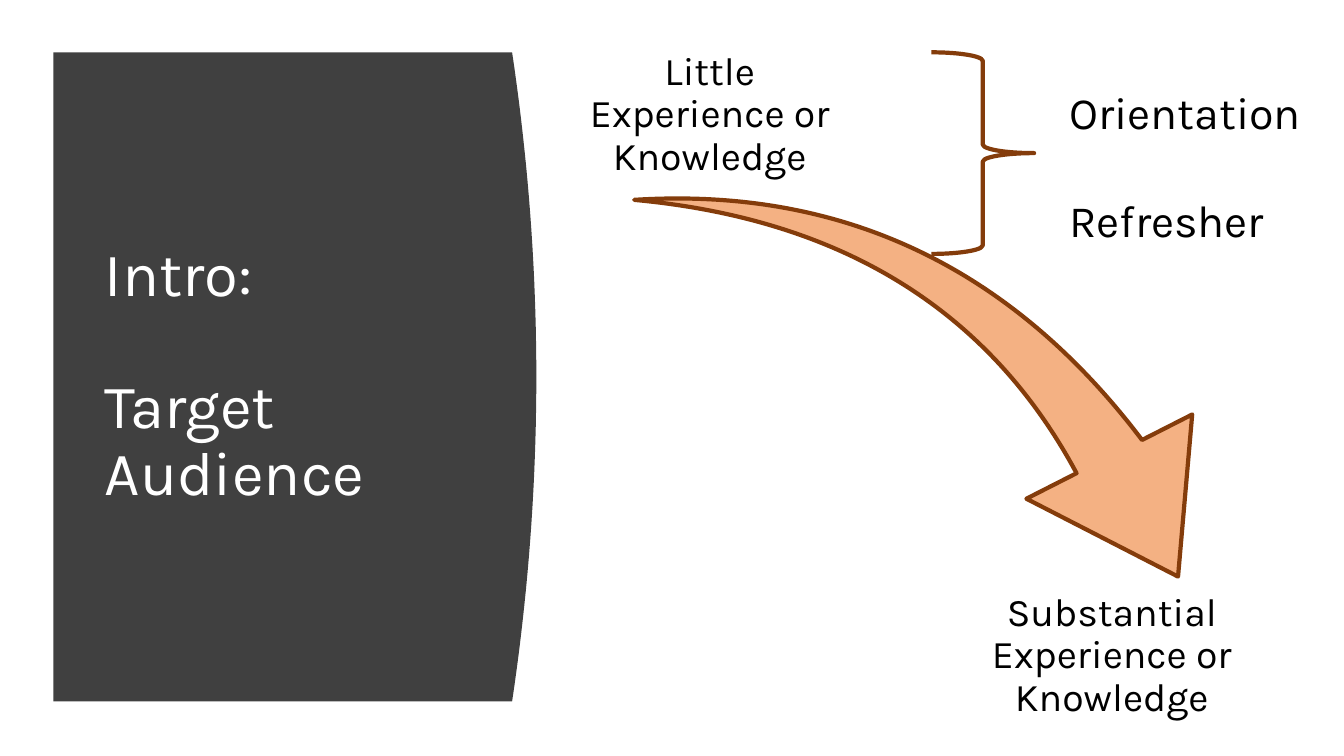
import pptx
import pptx.dml.color
import pptx.enum.shapes
import pptx.enum.text
import pptx.util

Pt = pptx.util.Pt
RGBColor = pptx.dml.color.RGBColor
MSO_ANCHOR = pptx.enum.text.MSO_ANCHOR
MSO_SHAPE = pptx.enum.shapes.MSO_SHAPE
PP_ALIGN = pptx.enum.text.PP_ALIGN

DARK_GREY = RGBColor(0x40, 0x40, 0x40)
WHITE = RGBColor(0xFF, 0xFF, 0xFF)
BLACK = RGBColor(0x00, 0x00, 0x00)
PEACH = RGBColor(0xF4, 0xB1, 0x83)
BROWN = RGBColor(0x84, 0x3C, 0x0B)
FONT_NAME = "Karla"
CURVE_STEPS = 40


def set_values(target, values):
    for name, value in values.items():
        setattr(target, name, value)


def place(shape, left, top, width, height):
    set_values(shape, {"left": Pt(left), "top": Pt(top),
                       "width": Pt(width), "height": Pt(height)})


def write_text(shape, lines, size, color, frame_format, paragraph_format):
    frame = shape.text_frame
    frame.text = "\n".join(lines)
    set_values(frame, {"word_wrap": True,
                       "auto_size": pptx.enum.text.MSO_AUTO_SIZE.NONE,
                       **frame_format})
    for paragraph in frame.paragraphs:
        set_values(paragraph, paragraph_format)
        for run in paragraph.runs:
            set_values(run.font, {"name": FONT_NAME, "size": Pt(size)})
            run.font.color.rgb = color


def add_curved_panel(slide, left, top, right, bottom, bulge):
    """Draw a panel whose right side bows outwards as a parabola."""
    points = [(left, top)]
    for step in range(CURVE_STEPS + 1):
        share = step / CURVE_STEPS
        offset = 2 * share - 1
        points.append((right + bulge * (1 - offset ** 2),
                       top + (bottom - top) * share))
    points.append((left, bottom))
    builder = slide.shapes.build_freeform(
        Pt(points[0][0]), Pt(points[0][1]), scale=1.0)
    builder.add_line_segments([(Pt(x), Pt(y)) for x, y in points[1:]])
    panel = builder.convert_to_shape()
    panel.shadow.inherit = False
    panel.fill.solid()
    panel.fill.fore_color.rgb = DARK_GREY
    panel.line.fill.background()


def add_outlined_shape(slide, kind, box, fill=None):
    shape = slide.shapes.add_shape(kind, *map(Pt, box))
    shape.shadow.inherit = False
    if fill is None:
        shape.fill.background()
    else:
        shape.fill.solid()
        shape.fill.fore_color.rgb = fill
    shape.line.color.rgb = BROWN
    shape.line.width = Pt(3)
    return shape


def add_level_label(slide, text, box, anchor):
    margins = {"margin_" + side: Pt(2.8)
               for side in ("left", "top", "right", "bottom")}
    write_text(slide.shapes.add_textbox(*map(Pt, box)), [text], 28, BLACK,
               {"vertical_anchor": anchor, **margins},
               {"alignment": PP_ALIGN.CENTER, "line_spacing": 0.9})


def format_title(title):
    place(title, 67.7, 80, 269.3, 377.3)
    write_text(title, ["Intro:", "Target Audience"], 44, WHITE,
               {"vertical_anchor": MSO_ANCHOR.MIDDLE},
               {"alignment": PP_ALIGN.LEFT, "line_spacing": 0.9})
    title.text_frame.paragraphs[1].space_before = Pt(47)


def main():
    presentation = pptx.Presentation()
    set_values(presentation, {"slide_width": Pt(960), "slide_height": Pt(540)})
    slide = presentation.slides.add_slide(presentation.slide_layouts[5])
    title = slide.shapes.title

    add_curved_panel(slide, 38.2, 37.4, 365.8, 501.1, 17.3)
    slide.shapes._spTree.append(title._element)
    format_title(title)

    arrow = add_outlined_shape(slide, MSO_SHAPE.SWOOSH_ARROW,
                               (476.6, 108.7, 388.1, 319.7), PEACH)
    arrow.adjustments[0] = 0.163
    arrow.adjustments[1] = 0.314
    arrow.rotation = 69.5

    add_level_label(slide, "Little Experience or Knowledge",
                    (412.6, 56.2, 188.6, 74.2), MSO_ANCHOR.BOTTOM)
    add_level_label(slide, "Substantial Experience or Knowledge",
                    (666.7, 420.5, 254.9, 74.2), MSO_ANCHOR.TOP)

    add_outlined_shape(slide, MSO_SHAPE.RIGHT_BRACE, (665.3, 37.4, 73.4, 144))
    courses = slide.shapes.add_textbox(Pt(756.7), Pt(18.7), Pt(203), Pt(162.7))
    write_text(courses, ["Orientation Refresher"], 32, BLACK,
               {"vertical_anchor": MSO_ANCHOR.TOP}, {"line_spacing": 2.0})

    presentation.save("out.pptx")


if __name__ == "__main__":
    main()
